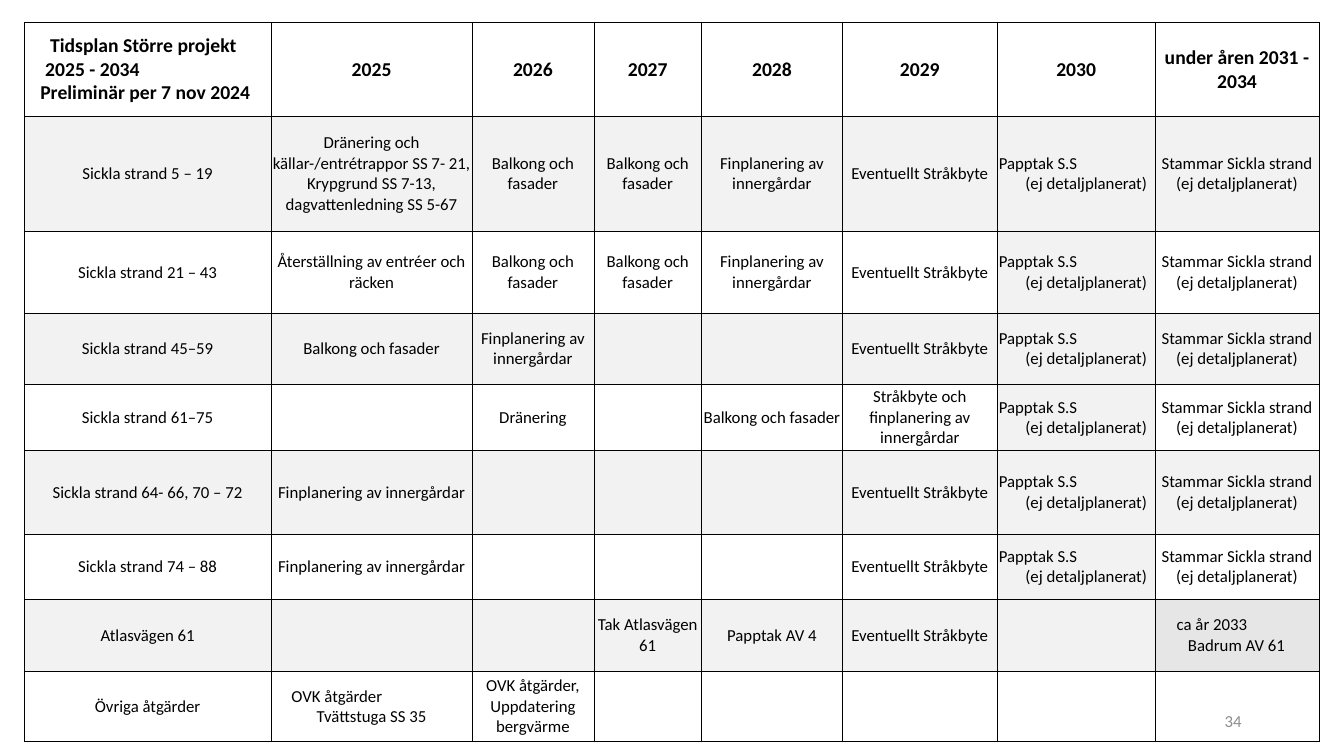
from pptx import Presentation
from pptx.dml.color import RGBColor
from pptx.enum.text import MSO_ANCHOR as ANCHOR, PP_ALIGN as ALIGN
from pptx.oxml import parse_xml
from pptx.oxml.ns import nsdecls
from pptx.util import Pt

COLORS = {"text": "000000", "border": "000000", "number": "8C8C8C",
          "band": "F2F2F2", "accent": "E7E6E6"}
FONT = "Calibri"

COL_WIDTHS = [176.4, 143.5, 87, 77, 100.5, 110.8, 112.6, 117.2]
ROW_HEIGHTS = [67.5, 82, 58.5, 51, 47, 60, 46.5, 51.5, 50]

# A cell is centred text, or a list of (indent, line) pairs set from the left
BALCONY = "Balkong och fasader"
YARD = "Finplanering av innergårdar"
SWAP = "Eventuellt Stråkbyte"
ROOF = [(1, "Papptak S.S"), (20, "(ej detaljplanerat)")]
PIPES = "Stammar Sickla strand (ej detaljplanerat)"

ROWS = [
    [[(18.5, "Tidsplan Större projekt"), (15, "2025 - 2034"),
      (11.5, "Preliminär per 7 nov 2024")],
     "2025", "2026", "2027", "2028", "2029", "2030", "under åren 2031 - 2034"],
    ["Sickla strand 5 – 19",
     "Dränering och källar-/entrétrappor SS 7- 21, Krypgrund SS 7-13, "
     "dagvattenledning SS 5-67",
     BALCONY, BALCONY, YARD, SWAP, ROOF, PIPES],
    ["Sickla strand 21 – 43", "Återställning av entréer och räcken",
     BALCONY, BALCONY, YARD, SWAP, ROOF, PIPES],
    ["Sickla strand 45–59", BALCONY, YARD, "", "", SWAP, ROOF, PIPES],
    ["Sickla strand 61–75", "", "Dränering", "", BALCONY,
     "Stråkbyte och finplanering av innergårdar", ROOF, PIPES],
    ["Sickla strand 64- 66, 70 – 72", YARD, "", "", "", SWAP, ROOF, PIPES],
    ["Sickla strand 74 – 88", YARD, "", "", "", SWAP, ROOF, PIPES],
    ["Atlasvägen 61", "", "", "Tak Atlasvägen 61", "Papptak AV 4", SWAP, "",
     [(15.5, "ca år 2033"), (23.5, "Badrum AV 61")]],
    ["Övriga åtgärder", [(14.5, "OVK åtgärder"), (32.5, "Tvättstuga SS 35")],
     "OVK åtgärder, Uppdatering bergvärme", "", "", "", "", ""],
]


def style_paragraph(p, size, color, align, bold=False):
    p.alignment = align
    p.font.name = FONT
    p.font.size = Pt(size)
    p.font.bold = bold
    p.font.color.rgb = RGBColor.from_string(COLORS[color])


def add_borders(cell):
    tcPr = cell._tc.get_or_add_tcPr()
    for side in ("lnL", "lnR", "lnT", "lnB"):
        tcPr.append(parse_xml(
            f'<a:{side} {nsdecls("a")} w="{Pt(0.5)}"><a:solidFill>'
            f'<a:srgbClr val="{COLORS["border"]}"/></a:solidFill></a:{side}>'))


def fill_cell(cell, content, header, fill):
    cell.margin_left = cell.margin_right = cell.margin_top = cell.margin_bottom = 0
    cell.vertical_anchor = ANCHOR.MIDDLE
    add_borders(cell)
    if fill:
        cell.fill.solid()
        cell.fill.fore_color.rgb = RGBColor.from_string(COLORS[fill])
    else:
        cell.fill.background()

    lines = [(None, content)] if isinstance(content, str) else content
    tf = cell.text_frame
    tf.text = "\n".join(text for _, text in lines)
    for p, (indent, _) in zip(tf.paragraphs, lines):
        align = ALIGN.CENTER if indent is None else ALIGN.LEFT
        style_paragraph(p, 14 if header else 12, "text", align, header)
        if indent:
            p._p.get_or_add_pPr().set("marL", str(Pt(indent)))


def cell_fill(row, col):
    """Odd rows are shaded, and so is every roof cell."""
    if ROWS[row][0] == "Atlasvägen 61" and col == len(COL_WIDTHS) - 1:
        return "accent"
    return "band" if row % 2 or ROWS[row][col] is ROOF else None


def add_schedule(slide, left, top):
    frame = slide.shapes.add_table(
        len(ROWS), len(COL_WIDTHS), Pt(left), Pt(top),
        Pt(sum(COL_WIDTHS)), Pt(sum(ROW_HEIGHTS)))
    table = frame.table
    table.first_row = table.horz_banding = False
    for column, width in zip(table.columns, COL_WIDTHS):
        column.width = Pt(width)
    for row, height in zip(table.rows, ROW_HEIGHTS):
        row.height = Pt(height)
    for i, contents in enumerate(ROWS):
        for j, content in enumerate(contents):
            fill_cell(table.cell(i, j), content, i == 0, cell_fill(i, j))


def add_page_number(slide, left, top, width, height):
    tf = slide.shapes.add_textbox(Pt(left), Pt(top), Pt(width), Pt(height)).text_frame
    tf.word_wrap = True
    tf.vertical_anchor = ANCHOR.MIDDLE
    tf.text = "34"
    style_paragraph(tf.paragraphs[0], 12, "number", ALIGN.RIGHT)


def main():
    prs = Presentation()
    prs.slide_width, prs.slide_height = Pt(960), Pt(540)
    slide = prs.slides.add_slide(prs.slide_layouts[6])  # blank
    add_page_number(slide, 678, 500.5, 216, 28.75)
    add_schedule(slide, 17.3, 15.8)
    prs.save("out.pptx")


if __name__ == "__main__":
    main()
